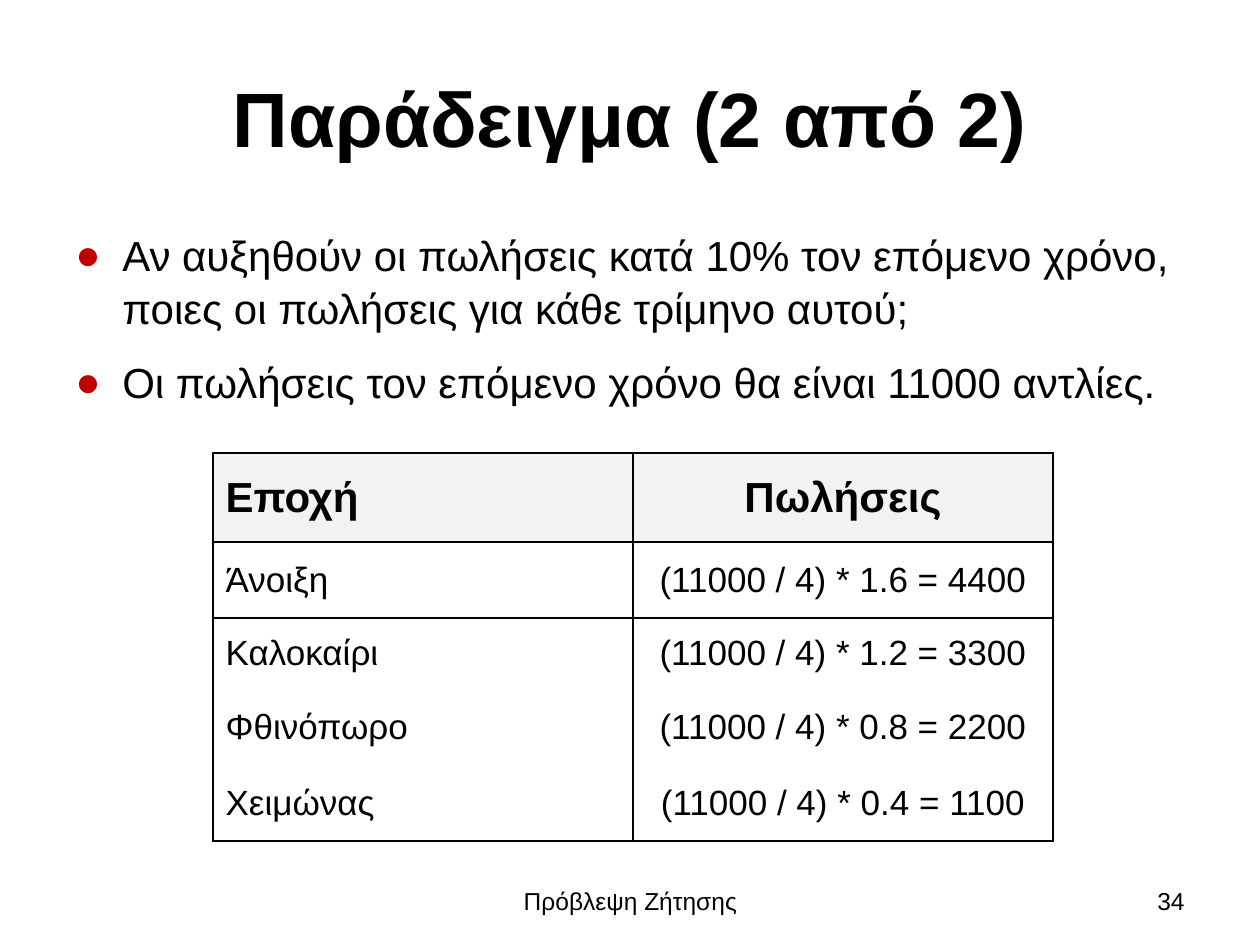
from dataclasses import dataclass

from lxml import etree
from pptx import Presentation
from pptx.dml.color import RGBColor
from pptx.enum.text import MSO_ANCHOR, PP_ALIGN
from pptx.oxml.ns import qn
from pptx.util import Emu, Pt

LEFT, MID, RIGHT = PP_ALIGN.LEFT, PP_ALIGN.CENTER, PP_ALIGN.RIGHT
TOP, CENTER = MSO_ANCHOR.TOP, MSO_ANCHOR.MIDDLE
SCALE = 914400 / 126


@dataclass(frozen=True)
class Theme:
    font: str = "Arial"
    ink: str = "000000"
    head: str = "F2F2F2"
    dot: str = "C00000"
    title: int = 44
    body: int = 24
    cell: int = 20
    foot: int = 14
    line: int = 1


@dataclass(frozen=True)
class Box:
    x: int
    y: int
    w: int
    h: int


@dataclass(frozen=True)
class Label:
    text: str
    box: Box
    align: PP_ALIGN


THEME = Theme()
TITLE = "Παράδειγμα (2 από 2)"
POINTS = [
    "Αν αυξηθούν οι πωλήσεις κατά 10% τον επόμενο χρόνο, "
    "ποιες οι πωλήσεις για κάθε τρίμηνο αυτού;",
    "Οι πωλήσεις τον επόμενο χρόνο θα είναι 11000 αντλίες.",
]
SALES = [
    ("Εποχή", "Πωλήσεις"),
    ("Άνοιξη", "(11000 / 4) * 1.6 = 4400"),
    ("Καλοκαίρι", "(11000 / 4) * 1.2 = 3300"),
    ("Φθινόπωρο", "(11000 / 4) * 0.8 = 2200"),
    ("Χειμώνας", "(11000 / 4) * 0.4 = 1100"),
]
HEIGHTS = [89, 76, 71, 76, 76]
RULES = (0, 1, 2, len(SALES))
FEET = [
    Label("Πρόβλεψη Ζήτησης", Box(431, 876, 399, 50), MID),
    Label("34", Box(903, 876, 294, 50), RIGHT),
]


def px(n: int) -> Emu:
    return Emu(round(n * SCALE))


def area(box: Box) -> tuple:
    return px(box.x), px(box.y), px(box.w), px(box.h)


def style(para, size: int, align: PP_ALIGN, bold: bool = False) -> None:
    para.alignment = align
    for run in para.runs:
        run.font.name = THEME.font
        run.font.size = Pt(size)
        run.font.bold = bold
        run.font.color.rgb = RGBColor.from_string(THEME.ink)


def add_text(slide, box: Box, text: str, anchor: MSO_ANCHOR):
    frame = slide.shapes.add_textbox(*area(box)).text_frame
    frame.word_wrap = True
    frame.vertical_anchor = anchor
    frame.text = text
    return frame


def add_dot(para) -> None:
    props = para._p.get_or_add_pPr()
    props.set("marL", str(px(47)))
    props.set("indent", str(px(-47)))
    color = etree.SubElement(props, qn("a:buClr"))
    etree.SubElement(color, qn("a:srgbClr"), val=THEME.dot)
    etree.SubElement(props, qn("a:buFont"), typeface=THEME.font)
    etree.SubElement(props, qn("a:buChar"), char="●")


def add_edges(cell, row: int) -> None:
    props = cell._tc.get_or_add_tcPr()
    shown = {"L": True, "R": True, "T": row in RULES, "B": row + 1 in RULES}
    for spot, (side, drawn) in enumerate(shown.items()):
        line = etree.Element(qn(f"a:ln{side}"), w=str(Pt(THEME.line)))
        fill = etree.SubElement(line, qn("a:solidFill" if drawn else "a:noFill"))
        if drawn:
            etree.SubElement(fill, qn("a:srgbClr"), val=THEME.ink)
        props.insert(spot, line)


def add_title(slide) -> None:
    shape = slide.shapes.title
    shape.left, shape.top, shape.width, shape.height = area(Box(63, 38, 1134, 158))
    shape.text_frame.text = TITLE
    shape.text_frame.vertical_anchor = CENTER
    style(shape.text_frame.paragraphs[0], THEME.title, MID, True)


def add_points(slide) -> None:
    frame = add_text(slide, Box(63, 221, 1134, 203), "\n".join(POINTS), TOP)
    for para in frame.paragraphs:
        style(para, THEME.body, LEFT)
        para.line_spacing = 1.05
        para.space_after = Pt(12)
        add_dot(para)


def add_sales(slide) -> None:
    box = Box(213, 453, 840, sum(HEIGHTS))
    table = slide.shapes.add_table(len(SALES), 2, *area(box)).table
    table.horz_banding = False
    for col in table.columns:
        col.width = px(box.w // 2)
    for row, (pair, high) in enumerate(zip(SALES, HEIGHTS)):
        table.rows[row].height = px(high)
        head = row == 0
        for col, text in enumerate(pair):
            cell = table.cell(row, col)
            cell.text = text
            cell.vertical_anchor = CENTER
            size = THEME.body if head else THEME.cell
            style(cell.text_frame.paragraphs[0], size, MID if col else LEFT, head)
            if head:
                cell.fill.solid()
                cell.fill.fore_color.rgb = RGBColor.from_string(THEME.head)
            else:
                cell.fill.background()
            add_edges(cell, row)


def main() -> None:
    deck = Presentation()
    deck.slide_width, deck.slide_height = px(1260), px(945)
    slide = deck.slides.add_slide(deck.slide_layouts[5])
    add_title(slide)
    add_points(slide)
    add_sales(slide)
    for foot in FEET:
        frame = add_text(slide, foot.box, foot.text, CENTER)
        style(frame.paragraphs[0], THEME.foot, foot.align)
    deck.save("out.pptx")


if __name__ == "__main__":
    main()
